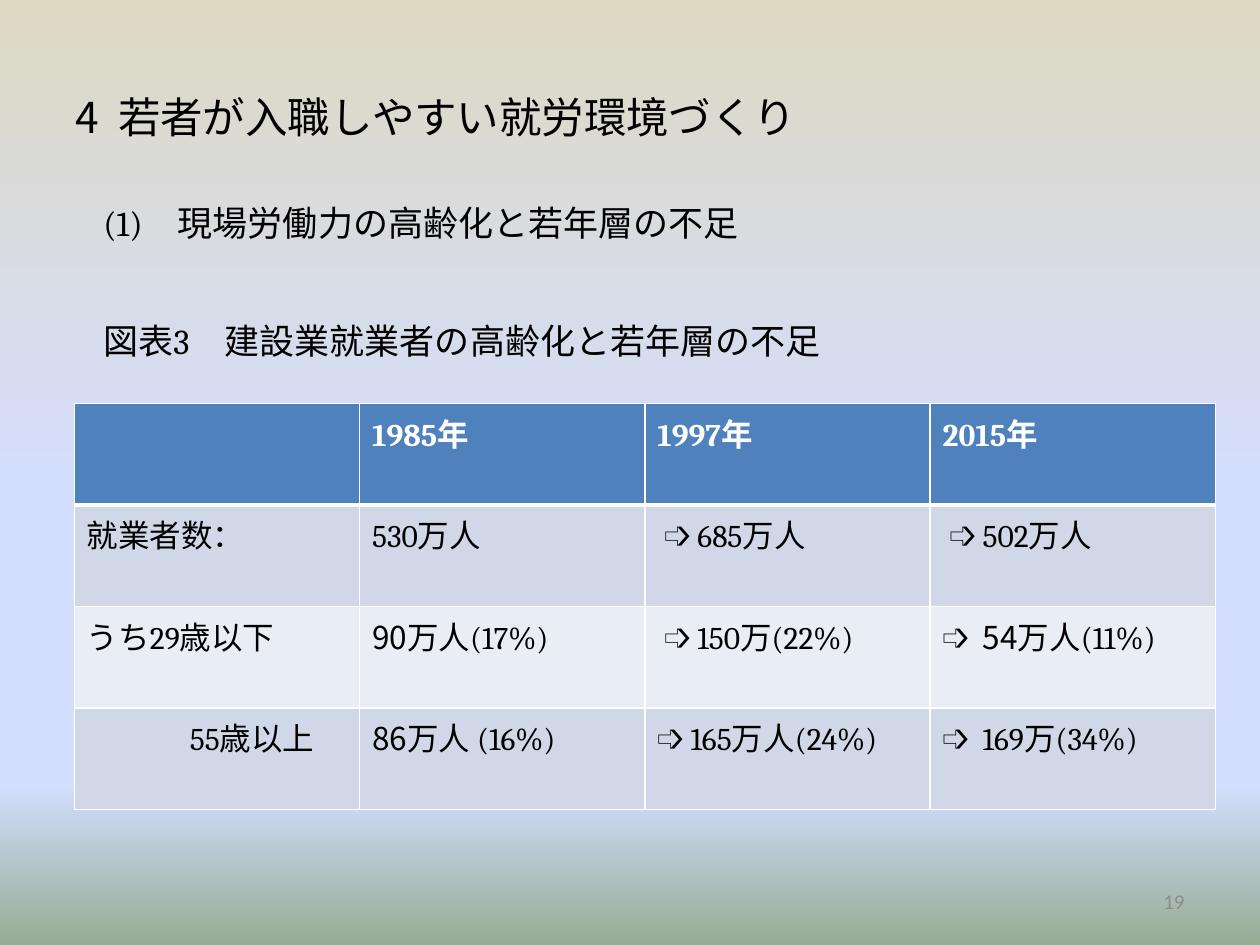
"""Build the slide on ageing and the shortage of young workers in construction."""
from lxml.etree import SubElement
from pptx import Presentation
from pptx.dml.color import RGBColor
from pptx.enum.text import MSO_ANCHOR, MSO_AUTO_SIZE, PP_ALIGN
from pptx.oxml.ns import qn
from pptx.util import Pt

BLACK = RGBColor(0, 0, 0)
WHITE = RGBColor(255, 255, 255)
GREY = RGBColor(0x8C, 0x8C, 0x8C)
BLUE = RGBColor(0x4F, 0x81, 0xBD)
DARK = RGBColor(0xD0, 0xD8, 0xE8)
LIGHT = RGBColor(0xE9, 0xED, 0xF4)
SAND = RGBColor(0xDD, 0xD9, 0xC3)
SKY = RGBColor(0xD4, 0xDE, 0xFF)
GREEN = RGBColor(0x96, 0xAB, 0x94)
SERIF = "Cambria"
SANS = "Noto Sans CJK JP"


def add_run(para, text, size, face=SERIF, color=BLACK, bold=False):
    run = para.add_run()
    run.text = text
    font = run.font
    font.size, font.name, font.bold = Pt(size), face, bold
    font.color.rgb = color
    SubElement(font._element, qn("a:ea"), typeface=SANS)


def add_edge(cell, side, width):
    line = SubElement(cell._tc.get_or_add_tcPr(), qn(f"a:ln{side}"), w=str(Pt(width)))
    fill = SubElement(line, qn("a:solidFill"))
    SubElement(fill, qn("a:srgbClr"), val=str(WHITE))


deck = Presentation()
deck.slide_width, deck.slide_height = Pt(720), Pt(540)
slide = deck.slides.add_slide(deck.slide_layouts[1])

back = slide.background.fill
back.gradient()
back.gradient_angle = 270
stops = slide.element.find(".//" + qn("a:gsLst"))
for stop in list(stops):
    stops.remove(stop)
for place, color in [(0, SAND), (53, SKY), (83, SKY), (100, GREEN)]:
    stop = SubElement(stops, qn("a:gs"), pos=str(place * 1000))
    SubElement(stop, qn("a:srgbClr"), val=str(color))

title = slide.shapes.title
title.left, title.top, title.width, title.height = Pt(36), Pt(21.6), Pt(648), Pt(90)
frame = title.text_frame
frame.auto_size = MSO_AUTO_SIZE.NONE
frame.vertical_anchor = MSO_ANCHOR.MIDDLE
para = frame.paragraphs[0]
para.alignment = PP_ALIGN.LEFT
add_run(para, "4  ", 24.3, SANS)
add_run(para, "若者が入職しやすい就労環境づくり", 24.3)

body = slide.placeholders[1]
body.left, body.top, body.width, body.height = Pt(20), Pt(111.6), Pt(675), Pt(376)
frame = body.text_frame
frame.auto_size = MSO_AUTO_SIZE.NONE
frame.margin_left = Pt(39)
heads = ["(1)　現場労働力の高齢化と若年層の不足", "図表3　建設業就業者の高齢化と若年層の不足"]
for i, text in enumerate(heads):
    para = frame.add_paragraph() if i else frame.paragraphs[0]
    para.space_before = Pt(43.5 * i)
    props = para._p.get_or_add_pPr()
    props.set("marL", "0")
    props.set("indent", "0")
    SubElement(props, qn("a:buNone"))
    add_run(para, text, 20)

box = slide.shapes.add_textbox(Pt(516), Pt(500.5), Pt(168), Pt(28.8))
frame = box.text_frame
frame.word_wrap = True
frame.vertical_anchor = MSO_ANCHOR.MIDDLE
para = frame.paragraphs[0]
para.alignment = PP_ALIGN.RIGHT
add_run(para, "19", 12, "Calibri", GREY)

rows = [
    [[], ["1985年"], ["1997年"], ["2015年"]],
    [["就業者数："], ["530万人"], [" ➩ 685万人"], [" ➩ 502万人"]],
    [["うち29歳以下"], ["90", "万人(17%)"], [" ➩ 150万(22%)"], ["➩  ", "54", "万人(11%)"]],
    [["55歳以上"], ["86", "万人 (16%)"], ["➩ 165万人(24%)"], ["➩  169万(34%)"]],
]
table = slide.shapes.add_table(4, 4, Pt(42.5), Pt(230.5), Pt(652), Pt(232)).table
for col in table.columns:
    col.width = Pt(163)
for r, row in enumerate(rows):
    table.rows[r].height = Pt(58)
    for c, parts in enumerate(row):
        cell = table.cell(r, c)
        for side in "LRTB":
            thick = (r, side) in [(0, "B"), (1, "T")]
            add_edge(cell, side, 3 if thick else 1)
        cell.fill.solid()
        cell.fill.fore_color.rgb = [BLUE, DARK, LIGHT, DARK][r]
        para = cell.text_frame.paragraphs[0]
        for part in parts:
            face = SANS if part.isdigit() else SERIF
            add_run(para, part, 18, face, BLACK if r else WHITE, r == 0)
table.cell(3, 0).margin_left = Pt(66)

deck.save("out.pptx")
